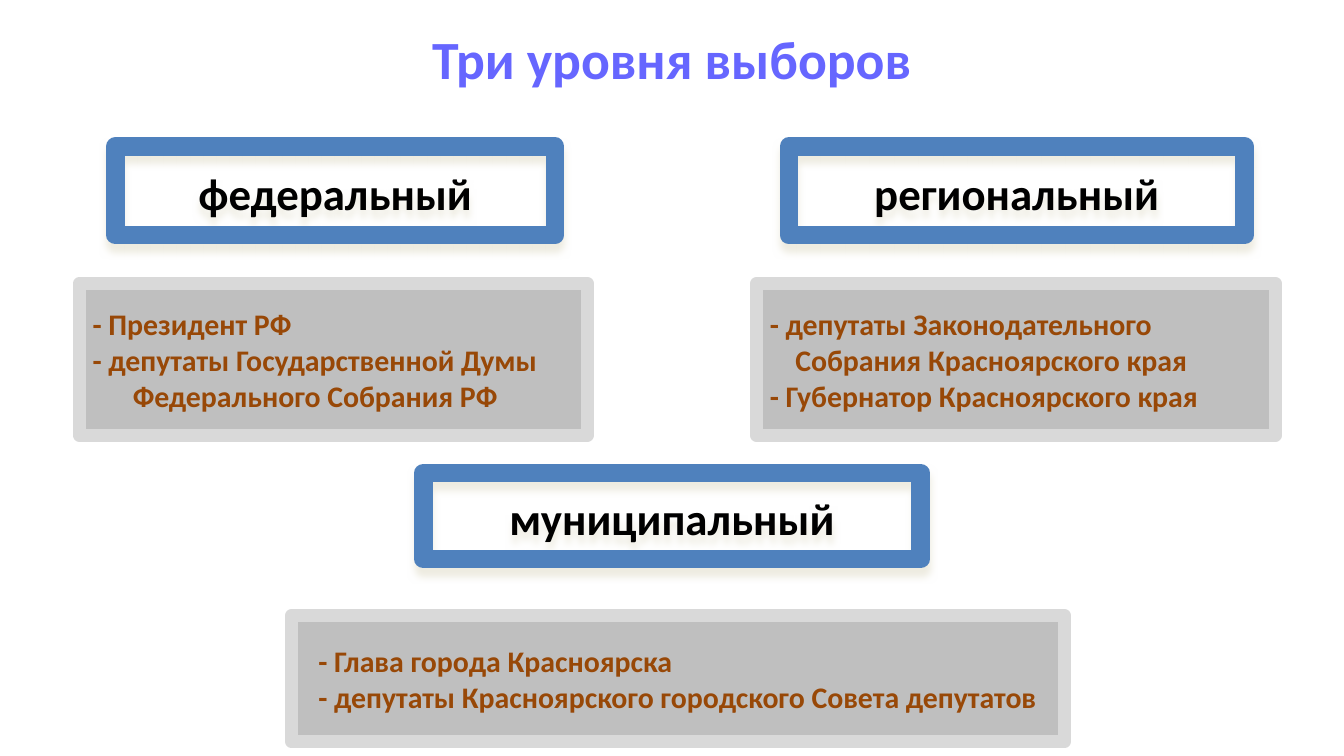
from dataclasses import dataclass

from lxml.etree import SubElement
from pptx import Presentation
from pptx.dml.color import RGBColor
from pptx.enum.shapes import MSO_SHAPE
from pptx.enum.text import MSO_ANCHOR as Anchor, PP_ALIGN as Align
from pptx.oxml.ns import qn
from pptx.util import Inches, Pt

VIOLET = RGBColor(0x66, 0x66, 0xFF)
BLUE = RGBColor(0x4F, 0x81, 0xBD)
BLACK = RGBColor(0, 0, 0)
BROWN = RGBColor(0x98, 0x48, 0x07)
GRAY = RGBColor(0xBF, 0xBF, 0xBF)
LIGHT_GRAY = RGBColor(0xD9, 0xD9, 0xD9)
SHADOW = RGBColor(0xEE, 0xEC, 0xE1)


@dataclass(frozen=True)
class Area:
    left: float
    top: float
    width: float
    height: float

    def lengths(self):
        return [Inches(v) for v in (self.left, self.top, self.width, self.height)]


@dataclass(frozen=True)
class Level:
    name: str
    heading: Area
    details: Area
    offices: tuple[str, ...]
    margin: float
    hanging: float


LEVELS = (
    Level("федеральный", Area(0.86, 1.09, 3.27, 0.66), Area(0.59, 2.11, 3.78, 1.13),
          ("- Президент РФ", "- депутаты Государственной Думы Федерального Собрания РФ"),
          0.3, 0.3),
    Level("региональный", Area(5.87, 1.09, 3.39, 0.66), Area(5.63, 2.11, 3.86, 1.13),
          ("- депутаты Законодательного\vСобрания Красноярского края",
           "- Губернатор Красноярского края"), 0.19, 0.19),
    Level("муниципальный", Area(3.15, 3.52, 3.7, 0.64), Area(2.17, 4.58, 5.75, 0.94),
          ("- Глава города Красноярска",
           "- депутаты Красноярского городского Совета депутатов"), 0.4, 0.3),
)


def write(para, text: str, *, size: float, color: RGBColor, align=Align.LEFT) -> None:
    para.text = text
    para.alignment = align
    for span in para.runs:
        span.font.name = "Calibri"
        span.font.size = Pt(size)
        span.font.bold = True
        span.font.color.rgb = color


def add_box(page, area: Area, *, line: RGBColor, line_width: float,
            fill: RGBColor | None = None):
    box = page.shapes.add_shape(MSO_SHAPE.RECTANGLE, *area.lengths())
    box.shadow.inherit = False
    if fill is None:
        box.fill.background()
    else:
        box.fill.solid()
        box.fill.fore_color.rgb = fill
    box.line.color.rgb = line
    box.line.width = Pt(line_width)
    frame = box.text_frame
    frame.word_wrap = True
    frame.vertical_anchor = Anchor.MIDDLE
    frame.margin_left = frame.margin_right = Inches(0.1)
    frame.margin_top = frame.margin_bottom = 0
    return box


def add_shadow(box) -> None:
    effects = box._element.spPr.find(qn("a:effectLst"))
    shadow = SubElement(effects, qn("a:outerShdw"), blurRad=str(Pt(4)),
                        dist=str(Pt(4)), dir="5400000", rotWithShape="0")
    SubElement(shadow, qn("a:srgbClr"), val=str(SHADOW))


def set_indent(para, margin: float, hanging: float) -> None:
    properties = para._p.get_or_add_pPr()
    properties.set("marL", str(Inches(margin)))
    properties.set("indent", str(-Inches(hanging)))


def add_heading(page, level: Level) -> None:
    box = add_box(page, level.heading, line=BLUE, line_width=10)
    add_shadow(box)
    box.text_frame.margin_top = Inches(0.02)
    write(box.text_frame.paragraphs[0], level.name, size=24, color=BLACK,
          align=Align.CENTER)


def add_details(page, level: Level) -> None:
    box = add_box(page, level.details, line=LIGHT_GRAY, line_width=7, fill=GRAY)
    frame = box.text_frame
    for index, office in enumerate(level.offices):
        para = frame.add_paragraph() if index else frame.paragraphs[0]
        set_indent(para, level.margin, level.hanging)
        write(para, office, size=16, color=BROWN)


def add_title(page, text: str) -> None:
    title = page.shapes.title
    title.left, title.top, title.width, title.height = Area(0.5, 0.12, 9, 0.63).lengths()
    title.text_frame.vertical_anchor = Anchor.MIDDLE
    write(title.text_frame.paragraphs[0], text, size=28.8, color=VIOLET,
          align=Align.CENTER)


def main() -> None:
    deck = Presentation()
    deck.slide_width, deck.slide_height = Inches(10), Inches(10 * 9 / 16)
    page = deck.slides.add_slide(deck.slide_layouts[5])
    add_title(page, "Три уровня выборов")
    for level in LEVELS:
        add_heading(page, level)
    for level in LEVELS:
        add_details(page, level)
    deck.save("out.pptx")


if __name__ == "__main__":
    main()
